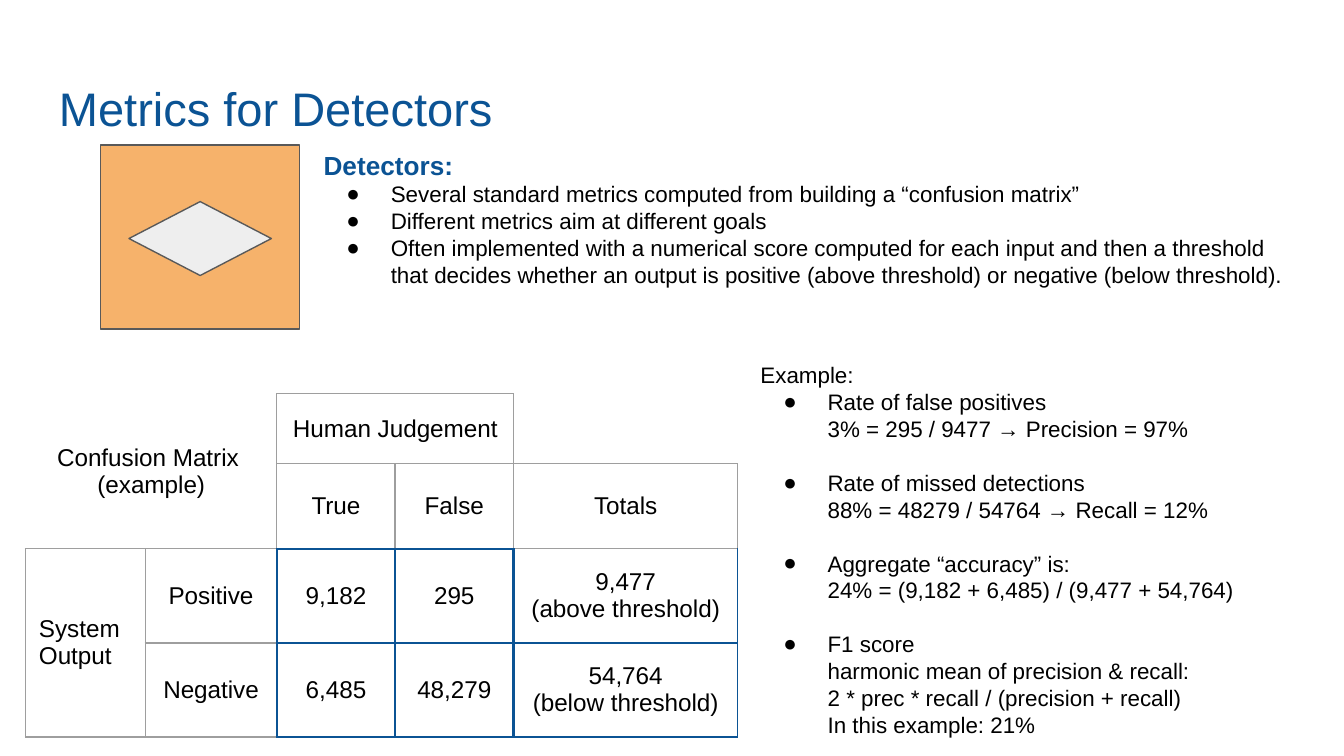
from lxml import etree
from pptx import Presentation
from pptx import util as u
from pptx.dml.color import RGBColor
from pptx.enum import shapes, text
from pptx.oxml.ns import qn

COLORS = {
    "blue": "0B5394",
    "orange": "F6B26B",
    "light": "EEEEEE",
    "outline": "595959",
    "grid": "9E9E9E",
    "black": "000000",
}
FONT = "Arial"
NO_STYLE = "{2D5ABB26-0587-4C30-8999-92F81FD0307C}"
GRID = ("grid", 0.75)
THIN = ("blue", 0.75)
THICK = ("blue", 1.5)

DETECTOR_POINTS = [
    "Several standard metrics computed from building a “confusion matrix”",
    "Different metrics aim at different goals",
    "Often implemented with a numerical score computed for each input and then a threshold "
    "that decides whether an output is positive (above threshold) or negative (below threshold).",
]
EXAMPLES = [
    ("Rate of false positives", "3% = 295 / 9477 → Precision = 97%"),
    ("Rate of missed detections", "88% = 48279 / 54764 → Recall = 12%"),
    ("Aggregate “accuracy” is:", "24% = (9,182 + 6,485) / (9,477 + 54,764)"),
    ("F1 score", "harmonic mean of precision & recall:",
     "2 * prec * recall / (precision + recall)", "In this example: 21%"),
]
MATRIX = [
    ["Confusion Matrix \n(example)", "", "Human Judgement", "", ""],
    ["", "", "True", "False", "Totals"],
    ["System Output", "Positive", "9,182", "295", "9,477\n(above threshold)"],
    ["", "Negative", "6,485", "48,279", "54,764\n(below threshold)"],
]
MERGES = [((0, 0), (1, 1)), ((0, 2), (0, 3)), ((2, 0), (3, 0))]


def matrix_borders(row, column):
    """Return the left, right, top and bottom lines of a matrix cell."""
    if row < 2 and column < 2:
        return None, GRID, None, GRID
    if (row, column) == (0, 4):
        return GRID, None, None, GRID
    if row < 2:
        return GRID, GRID, GRID, THICK if row == 1 and column < 4 else GRID
    if column < 2:
        return GRID, THICK if column == 1 else GRID, GRID, GRID
    if column < 4:
        return THICK, THICK, THICK, THICK
    return THICK, THIN, GRID if row == 2 else THIN, THIN


class SlideBuilder:
    def __init__(self, slide):
        self.slide = slide

    def color(self, name):
        return RGBColor.from_string(COLORS[name])

    def format_runs(self, paragraph, size, color="black", bold=False):
        for run in paragraph.runs:
            run.font.name = FONT
            run.font.size = u.Pt(size)
            run.font.bold = bold
            run.font.color.rgb = self.color(color)

    def set_insets(self, item):
        item.margin_left = item.margin_right = u.Inches(0.1)
        item.margin_top = item.margin_bottom = u.Inches(0.1)

    def text_box(self, left, top, width, height, content, size, color="black", bold=False):
        box = self.slide.shapes.add_textbox(*map(u.Inches, (left, top, width, height)))
        frame = box.text_frame
        frame.word_wrap = True
        self.set_insets(frame)
        frame.text = content
        self.format_runs(frame.paragraphs[0], size, color, bold)
        return frame

    def list_item(self, frame, content, bullet=True, gap=0):
        paragraph = frame.add_paragraph()
        paragraph.text = content
        paragraph.space_before = u.Pt(gap)
        self.format_runs(paragraph, 12)
        properties = paragraph._p.get_or_add_pPr()
        properties.set("marL", str(u.Inches(0.5)))
        properties.set("indent", str(u.Inches(-0.33) if bullet else 0))
        if bullet:
            bullet_color = etree.SubElement(properties, qn("a:buClr"))
            etree.SubElement(bullet_color, qn("a:srgbClr"), val=COLORS["black"])
            etree.SubElement(properties, qn("a:buFont"), typeface=FONT)
            etree.SubElement(properties, qn("a:buChar"), char="●")

    def icon_part(self, group, kind, left, top, width, height, fill):
        shape = group.shapes.add_shape(kind, *map(u.Inches, (left, top, width, height)))
        shape.shadow.inherit = False
        shape.fill.solid()
        shape.fill.fore_color.rgb = self.color(fill)
        shape.line.color.rgb = self.color("outline")
        shape.line.width = u.Pt(0.75)

    def border(self, cell, side, line):
        properties = cell._tc.get_or_add_tcPr()
        edge = etree.SubElement(properties, qn(f"a:ln{side}"))
        if line is None:
            etree.SubElement(edge, qn("a:noFill"))
            return
        color, width = line
        edge.set("w", str(u.Pt(width)))
        fill = etree.SubElement(edge, qn("a:solidFill"))
        etree.SubElement(fill, qn("a:srgbClr"), val=COLORS[color])

    def matrix(self, left, top, widths, heights):
        frame = self.slide.shapes.add_table(
            len(heights), len(widths), u.Inches(left), u.Inches(top),
            u.Inches(sum(widths)), u.Inches(sum(heights)))
        table = frame.table
        table.first_row = table.horz_banding = False
        table._tbl.tblPr.find(qn("a:tableStyleId")).text = NO_STYLE
        for column, width in zip(table.columns, widths):
            column.width = u.Inches(width)
        for row, height in zip(table.rows, heights):
            row.height = u.Inches(height)
        for row, values in enumerate(MATRIX):
            for column, value in enumerate(values):
                self.matrix_cell(table.cell(row, column), value, row, column)
        for first, last in MERGES:
            table.cell(*first).merge(table.cell(*last))

    def matrix_cell(self, cell, value, row, column):
        for side, line in zip("LRTB", matrix_borders(row, column)):
            self.border(cell, side, line)
        cell.fill.background()
        self.set_insets(cell)
        cell.vertical_anchor = text.MSO_ANCHOR.MIDDLE
        cell.text_frame.text = value
        for paragraph in cell.text_frame.paragraphs:
            paragraph.font.size = u.Pt(13)
            if value != "System Output":
                paragraph.alignment = text.PP_ALIGN.CENTER
            self.format_runs(paragraph, 13)


def main():
    presentation = Presentation()
    presentation.slide_width = u.Inches(10)
    presentation.slide_height = presentation.slide_width * 9 // 16
    slide = presentation.slides.add_slide(presentation.slide_layouts[6])
    builder = SlideBuilder(slide)

    title = builder.text_box(0.34, 0.49, 9.32, 0.63, "Metrics for Detectors", 25.2, "blue")
    title.vertical_anchor = text.MSO_ANCHOR.MIDDLE

    icon = slide.shapes.add_group_shape()
    kinds = shapes.MSO_SHAPE
    builder.icon_part(icon, kinds.RECTANGLE, 0.75, 1.08, 1.48, 1.37, "orange")
    builder.icon_part(icon, kinds.FLOWCHART_DECISION, 0.96, 1.5, 1.06, 0.55, "light")

    detectors = builder.text_box(2.31, 1.01, 7.47, 1.25, "Detectors:", 14, "blue", True)
    for point in DETECTOR_POINTS:
        builder.list_item(detectors, point)

    builder.matrix(0.19, 2.93, [0.89, 0.98, 0.88, 0.88, 1.67], [0.52, 0.63, 0.7, 0.7])

    examples = builder.text_box(5.56, 2.59, 4.14, 3.23, "Example:", 12)
    for number, (heading, *details) in enumerate(EXAMPLES):
        builder.list_item(examples, heading, gap=14.4 if number else 0)
        for detail in details:
            builder.list_item(examples, detail, bullet=False)

    presentation.save("out.pptx")


if __name__ == "__main__":
    main()
